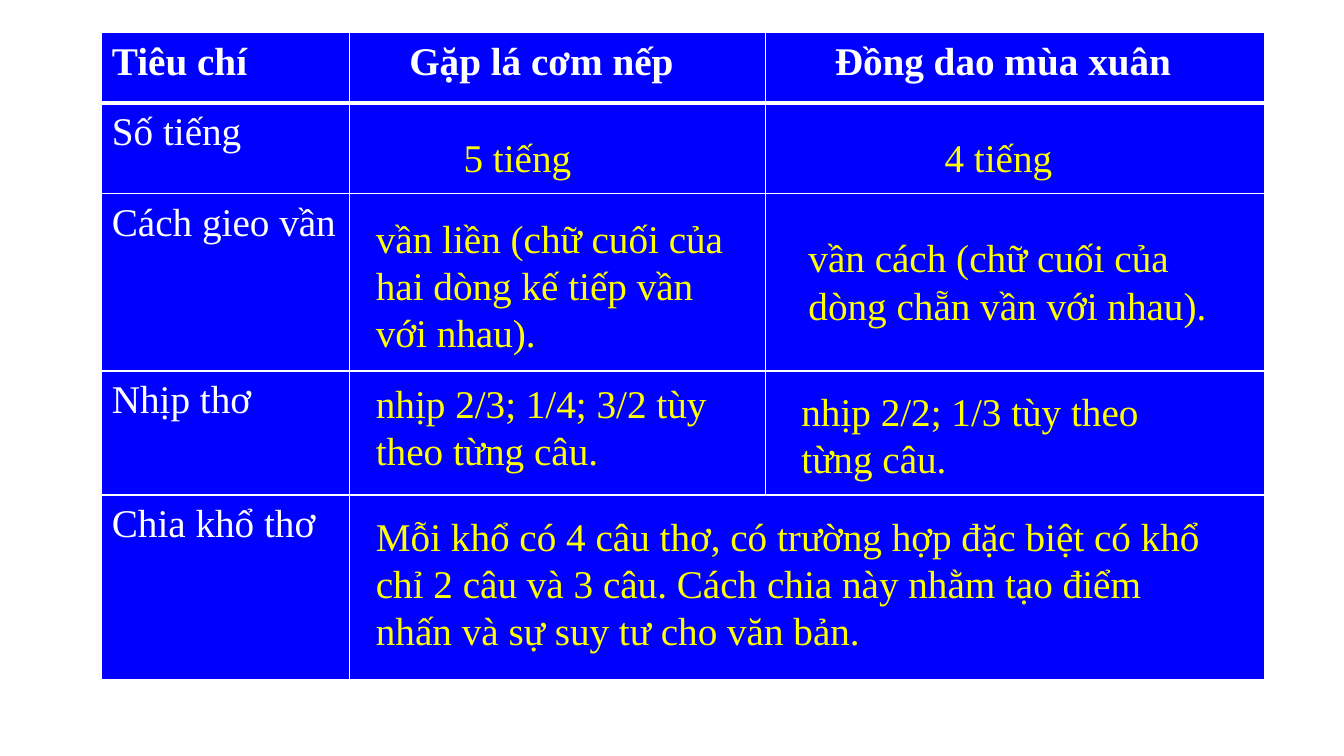
from dataclasses import dataclass

from lxml.etree import SubElement
from pptx import Presentation
from pptx.dml.color import RGBColor
from pptx.enum.text import MSO_AUTO_SIZE
from pptx.oxml.ns import qn
from pptx.table import _Cell
from pptx.text.text import TextFrame
from pptx.util import Inches, Pt

BLUE = RGBColor(0x00, 0x00, 0xFF)
WHITE = RGBColor(0xFF, 0xFF, 0xFF)
YELLOW = RGBColor(0xFF, 0xFF, 0x00)
FONT = "Times New Roman"

COLUMN_WIDTHS = [2.46, 4.12, 4.95]
ROW_HEIGHTS = [0.7, 0.9, 1.76, 1.23, 1.83]
CRITERIA = ["Số tiếng", "Cách gieo vần", "Nhịp thơ", "Chia khổ thơ"]


@dataclass(frozen=True)
class Heading:
    text: str
    indent: float


@dataclass(frozen=True)
class Answer:
    text: str
    left: float
    top: float
    width: float
    height: float
    wrap: bool = True


HEADINGS = [
    Heading("Tiêu chí", 0.1),
    Heading("Gặp lá cơm nếp", 0.59),
    Heading("Đồng dao mùa xuân", 0.69),
]
ANSWERS = [
    Answer("5 tiếng", 4.5, 1.27, 1.28, 0.57, wrap=False),
    Answer("4 tiếng", 9.27, 1.27, 1.28, 0.57, wrap=False),
    Answer("vần liền (chữ cuối của hai dòng kế tiếp vần với nhau).", 3.63, 2.08, 3.79, 1.51),
    Answer("vần cách (chữ cuối của dòng chẵn vần với nhau).", 7.92, 2.27, 4.22, 1.04),
    Answer("nhịp 2/3; 1/4; 3/2 tùy theo từng câu.", 3.63, 3.71, 3.6, 1.04),
    Answer("nhịp 2/2; 1/3 tùy theo từng câu.", 7.85, 3.79, 4.22, 1.04),
    Answer(
        "Mỗi khổ có 4 câu thơ, có trường hợp đặc biệt có khổ chỉ 2 câu và 3 câu. "
        "Cách chia này nhằm tạo điểm nhấn và sự suy tư cho văn bản.",
        3.63, 5.03, 8.52, 1.51,
    ),
]


def write_text(frame: TextFrame, text: str, *, color: RGBColor, size: float = 28,
               bold: bool = False, line_spacing: float | None = None) -> None:
    paragraph = frame.paragraphs[0]
    paragraph.line_spacing = line_spacing
    run = paragraph.add_run()
    run.text = text
    run.font.name = FONT
    run.font.size = Pt(size)
    run.font.bold = bold
    run.font.color.rgb = color


def style_cell(cell: _Cell, top: float, bottom: float) -> None:
    properties = cell._tc.get_or_add_tcPr()
    for side, width in {"L": 1, "R": 1, "T": top, "B": bottom}.items():
        border = SubElement(properties, qn(f"a:ln{side}"), w=str(Pt(width)))
        fill = SubElement(border, qn("a:solidFill"))
        SubElement(fill, qn("a:srgbClr"), val=str(WHITE))
    cell.fill.solid()
    cell.fill.fore_color.rgb = BLUE


def add_comparison(slide) -> None:
    comparison = slide.shapes.add_table(
        len(ROW_HEIGHTS), len(COLUMN_WIDTHS), Inches(1.01), Inches(0.32),
        Inches(sum(COLUMN_WIDTHS)), Inches(sum(ROW_HEIGHTS))).table
    for column, width in zip(comparison.columns, COLUMN_WIDTHS):
        column.width = Inches(width)
    for index, (row, height) in enumerate(zip(comparison.rows, ROW_HEIGHTS)):
        row.height = Inches(height)
        for cell in row.cells:
            style_cell(cell, top=3 if index == 1 else 1, bottom=3 if index == 0 else 1)

    # Header row and criteria column
    for column, heading in enumerate(HEADINGS):
        cell = comparison.cell(0, column)
        cell.margin_left = Inches(heading.indent)
        write_text(cell.text_frame, heading.text, color=WHITE, bold=True, line_spacing=1.07)
    for row, criterion in enumerate(CRITERIA, start=1):
        write_text(comparison.cell(row, 0).text_frame, criterion, color=WHITE, line_spacing=1.07)

    # The stanza answer covers both poems
    comparison.cell(4, 1).merge(comparison.cell(4, 2))


def add_answer(slide, answer: Answer) -> None:
    frame = slide.shapes.add_textbox(
        Inches(answer.left), Inches(answer.top),
        Inches(answer.width), Inches(answer.height)).text_frame
    frame.word_wrap = answer.wrap
    frame.auto_size = MSO_AUTO_SIZE.SHAPE_TO_FIT_TEXT
    write_text(frame, answer.text, color=YELLOW)


def main() -> None:
    presentation = Presentation()
    presentation.slide_width = Inches(13.33)
    presentation.slide_height = Inches(7.5)
    slide = presentation.slides.add_slide(presentation.slide_layouts[6])
    add_comparison(slide)
    for answer in ANSWERS:
        add_answer(slide, answer)
    presentation.save("out.pptx")


if __name__ == "__main__":
    main()
